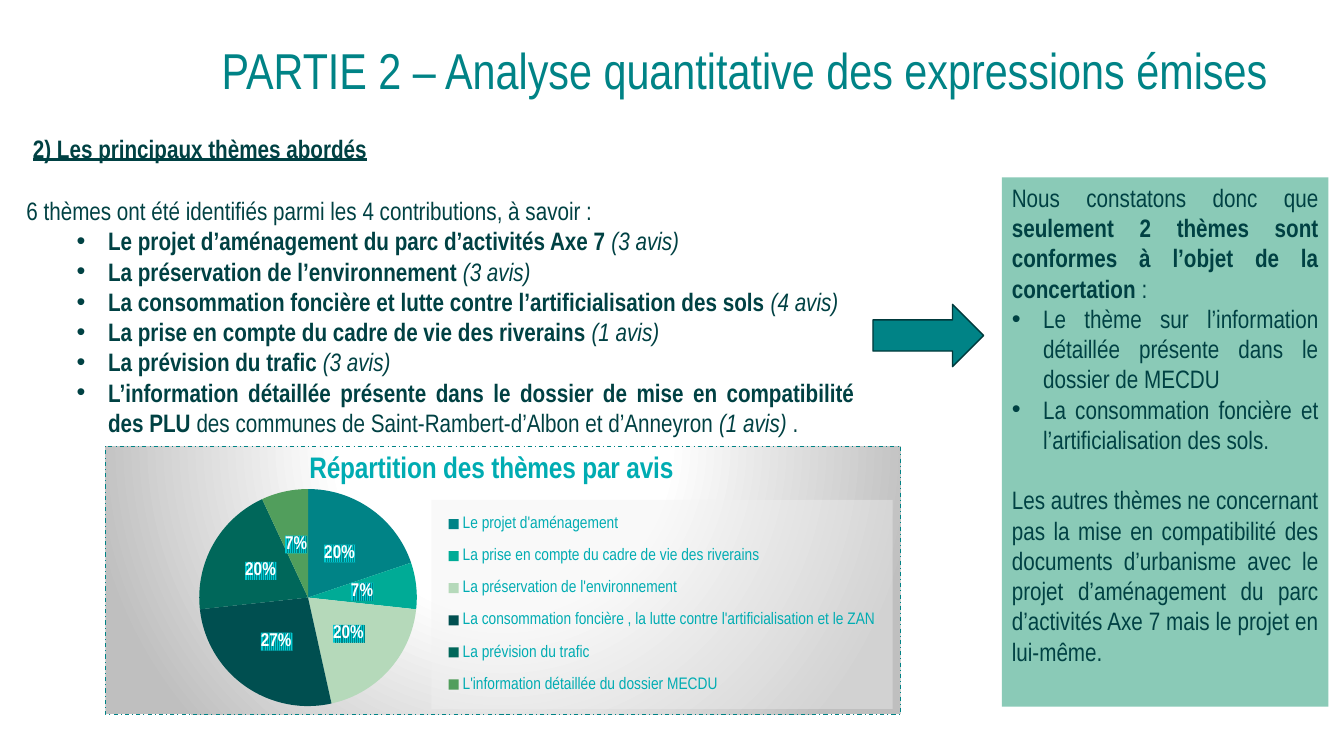
from pptx import Presentation
from pptx.chart.data import CategoryChartData
from pptx.dml.color import RGBColor
from pptx.enum.chart import XL_CHART_TYPE, XL_LABEL_POSITION, XL_LEGEND_POSITION
from pptx.enum.shapes import MSO_SHAPE
from pptx.enum.text import MSO_ANCHOR, MSO_AUTO_SIZE, PP_ALIGN
from pptx.oxml import parse_xml
from pptx.oxml.ns import nsdecls, qn
from pptx.util import Cm, Pt

COLORS = {
    "teal": "008386", "dark": "004143", "outline": "00393B", "panel": "8ACAB7",
    "bright": "00ACB2", "label": "00C9D1", "white": "FFFFFF", "grey": "BFBFBF",
    "legend": "F2F2F2",
}
SLICES = [
    ("Le projet d'aménagement", 20, "008386"),
    ("La prise en compte du cadre de vie des riverains", 7, "00AB96"),
    ("La préservation de l'environnement", 20, "B5D9BA"),
    ("La consommation foncière , la lutte contre l'artificialisation et le ZAN", 27, "004F50"),
    ("La prévision du trafic", 20, "00675A"),
    ("L'information détaillée du dossier MECDU", 7, "519E5C"),
]
THEMES = [
    ("Le projet d’aménagement du parc d’activités Axe 7 ", "(3 avis)"),
    ("La préservation de l’environnement ", "(3 avis)"),
    ("La consommation foncière et lutte contre l’artificialisation des sols ", "(4 avis)"),
    ("La prise en compte du cadre de vie des riverains ", "(1 avis)"),
    ("La prévision du trafic ", "(3 avis)"),
]


def color(name):
    return RGBColor.from_string(COLORS[name])


def set_font(font, color_name, **values):
    values = {"name": "Arial Narrow", "bold": False, **values}
    for attribute, value in values.items():
        setattr(font, attribute, value)
    font.color.rgb = color(color_name)


def set_layout(parent, following, box, inner=False):
    """Place a chart part by fractions of the chart, before the element given."""
    for old in parent.findall(qn("c:layout")):
        parent.remove(old)
    target = '<c:layoutTarget val="inner"/>' if inner else ""
    modes = '<c:xMode val="edge"/><c:yMode val="edge"/>'
    sides = "".join(f'<c:{side} val="{value}"/>' for side, value in zip("xywh", box))
    following.addprevious(parse_xml(
        f'<c:layout {nsdecls("c")}><c:manualLayout>{target}{modes}{sides}'
        "</c:manualLayout></c:layout>"))


def set_area(parent, content):
    """Give a chart part its fill and border."""
    parent.find(qn("c:txPr")).addprevious(
        parse_xml(f'<c:spPr {nsdecls("c", "a")}>{content}</c:spPr>'))


def hex_fill(name, inside=""):
    return f'<a:srgbClr val="{COLORS[name]}">{inside}</a:srgbClr>'


class SlideBuilder:
    def __init__(self, presentation):
        self.slide = presentation.slides.add_slide(presentation.slide_layouts[1])

    def place(self, shape, box):
        for attribute, value in zip(("left", "top", "width", "height"), box):
            setattr(shape, attribute, Cm(value))

    def fill_text(self, shape, paragraphs, align=PP_ALIGN.JUSTIFY, size=18, text_color="dark"):
        """Each paragraph is (runs, left margin or None, space before)."""
        frame = shape.text_frame
        settings = {"word_wrap": True, "auto_size": MSO_AUTO_SIZE.NONE}
        for attribute, value in settings.items():
            setattr(frame, attribute, value)
        for number, (runs, margin, space) in enumerate(paragraphs):
            paragraph = frame.add_paragraph() if number else frame.paragraphs[0]
            properties = paragraph._p.get_or_add_pPr()
            if margin is None:
                properties.set("marL", "0")
                properties.set("indent", "0")
                properties.append(parse_xml(f'<a:buNone {nsdecls("a")}/>'))
            else:
                properties.set("marL", str(Cm(margin)))
                properties.set("indent", str(Cm(-0.79)))
                for tag in ('buFont {} typeface="Arial"', 'buChar {} char="•"'):
                    properties.append(parse_xml(f'<a:{tag.format(nsdecls("a"))}/>'))
            paragraph.alignment = align
            paragraph.space_before = Pt(space)
            for text, values in runs:
                run = paragraph.add_run()
                run.text = text
                set_font(run.font, text_color, size=Pt(size), **values)
        return frame

    def title(self, text, box):
        shape = self.slide.shapes.title
        self.place(shape, box)
        frame = self.fill_text(shape, [([(text, {})], None, 0)], PP_ALIGN.LEFT, 36, "teal")
        frame.vertical_anchor = MSO_ANCHOR.MIDDLE
        frame.paragraphs[0].line_spacing = 0.9

    def body(self, paragraphs, box):
        shape = self.slide.placeholders[1]
        self.place(shape, box)
        self.fill_text(shape, paragraphs)

    def text_box(self, paragraphs, box, align):
        shape = self.slide.shapes.add_textbox(*map(Cm, box))
        self.fill_text(shape, paragraphs, align)

    def preset(self, kind, box, fill, line=None):
        shape = self.slide.shapes.add_shape(kind, *map(Cm, box))
        shape.shadow.inherit = False
        shape.fill.solid()
        shape.fill.fore_color.rgb = color(fill)
        if line:
            shape.line.color.rgb = color(line)
            shape.line.width = Pt(1)
        else:
            shape.line.fill.background()
        return shape

    def panel(self, paragraphs, box):
        shape = self.preset(MSO_SHAPE.RECTANGLE, box, "panel")
        self.fill_text(shape, paragraphs).vertical_anchor = MSO_ANCHOR.TOP

    def pie(self, title, slices, box):
        data = CategoryChartData()
        data.categories = [name for name, _, _ in slices]
        data.add_series("Avis", [value for _, value, _ in slices])
        chart = self.slide.shapes.add_chart(XL_CHART_TYPE.PIE, *map(Cm, box), data).chart
        set_font(chart.font, "dark", size=Pt(10))

        # Title
        chart.has_title = True
        paragraph = chart.chart_title.text_frame.paragraphs[0]
        run = paragraph.add_run()
        run.text = title
        set_font(run.font, "bright", size=Pt(21.3), bold=True)
        element = chart.chart_title._element
        set_layout(element, element.find(qn("c:overlay")), (0.25, 0.01))

        # Slices and percentages
        plot = chart.plots[0]
        plot.vary_by_categories = True
        for number, (_, _, fill) in enumerate(slices):
            point = plot.series[0].points[number]
            point.format.fill.solid()
            point.format.fill.fore_color.rgb = RGBColor.from_string(fill)
        plot.has_data_labels = True
        labels = plot.data_labels
        settings = {"show_percentage": True, "show_value": False, "number_format": "0%",
                    "number_format_is_linked": False, "position": XL_LABEL_POSITION.CENTER}
        for attribute, value in settings.items():
            setattr(labels, attribute, value)
        set_font(labels.font, "white", size=Pt(13.3), bold=True)
        set_area(labels._element, f'<a:pattFill prst="ltVert"><a:fgClr>{hex_fill("teal")}'
                 f'</a:fgClr><a:bgClr>{hex_fill("label")}</a:bgClr></a:pattFill>')
        area = chart._chartSpace.chart.plotArea
        set_layout(area, plot._element, (0.08, 0.16, 0.35, 0.81), inner=True)

        # Legend
        chart.has_legend = True
        legend = chart.legend
        legend.position = XL_LEGEND_POSITION.RIGHT
        legend.include_in_layout = False
        set_font(legend.font, "bright", size=Pt(12))
        element = legend._element
        set_layout(element, element.find(qn("c:overlay")), (0.41, 0.2, 0.58, 0.78))
        pale = hex_fill("legend", '<a:alpha val="39000"/>')
        set_area(element, f"<a:solidFill>{pale}</a:solidFill>")

        # Background
        stops = "".join(f'<a:gs pos="{position}000">{hex_fill(name)}</a:gs>'
                        for position, name in ((0, "white"), (39, "white"), (100, "grey")))
        set_area(chart._chartSpace, f'<a:gradFill><a:gsLst>{stops}</a:gsLst><a:path path="circle">'
                 '<a:fillToRect l="50000" t="-80000" r="50000" b="180000"/></a:path></a:gradFill>'
                 f'<a:ln w="9525"><a:solidFill>{hex_fill("teal")}</a:solidFill>'
                 '<a:prstDash val="dashDot"/></a:ln>')


def main():
    presentation = Presentation()
    presentation.slide_width, presentation.slide_height = Cm(33.87), Cm(19.05)
    builder = SlideBuilder(presentation)
    bold, italic = {"bold": True}, {"italic": True}

    # Headings
    builder.title("PARTIE 2 – Analyse quantitative des expressions émises", (5.33, 1.02, 28.5, 1.63))
    heading = ("2) Les principaux thèmes abordés", {"bold": True, "underline": True})
    builder.text_box([([heading], None, 0)], (0.58, 3.23, 24.23, 1.02), PP_ALIGN.LEFT)

    # List of themes
    intro = "6 thèmes ont été identifiés parmi les 4 contributions, à savoir :"
    themes = [[(theme, bold), (count, italic)] for theme, count in THEMES]
    themes.append([
        ("L’information détaillée présente dans le dossier de mise en compatibilité des PLU ", bold),
        ("des communes de Saint-Rambert-d’Albon et d’Anneyron ", {}), ("(1 avis) ", italic), (".", {})])
    builder.body([([(intro, {})], None, 0)] + [(runs, 2.06, 0) for runs in themes],
                 (0.41, 4.8, 21.39, 6.4))

    # Conclusion
    builder.preset(MSO_SHAPE.RIGHT_ARROW, (22, 7.67, 2.79, 1.57), "teal", "outline")
    builder.panel([
        ([("Nous constatons donc que ", {}),
          ("seulement 2 thèmes sont conformes à l’objet de la concertation ", bold), (":", {})], None, 0),
        ([("Le thème sur l’information détaillée présente dans le dossier de MECDU", {})], 0.79, 0),
        ([("La consommation foncière et l’artificialisation des sols.", {})], 0.79, 0),
        ([("Les autres thèmes ne concernant pas la mise en compatibilité des documents d’urbanisme avec "
           "le projet d’aménagement du parc d’activités Axe 7 mais le projet en lui-même.", {})], None, 21.6),
    ], (25.25, 4.47, 8.23, 13.34))

    # Chart
    builder.pie("Répartition des thèmes par avis", SLICES, (2.64, 11.23, 20.07, 6.78))
    presentation.save("out.pptx")


if __name__ == "__main__":
    main()
